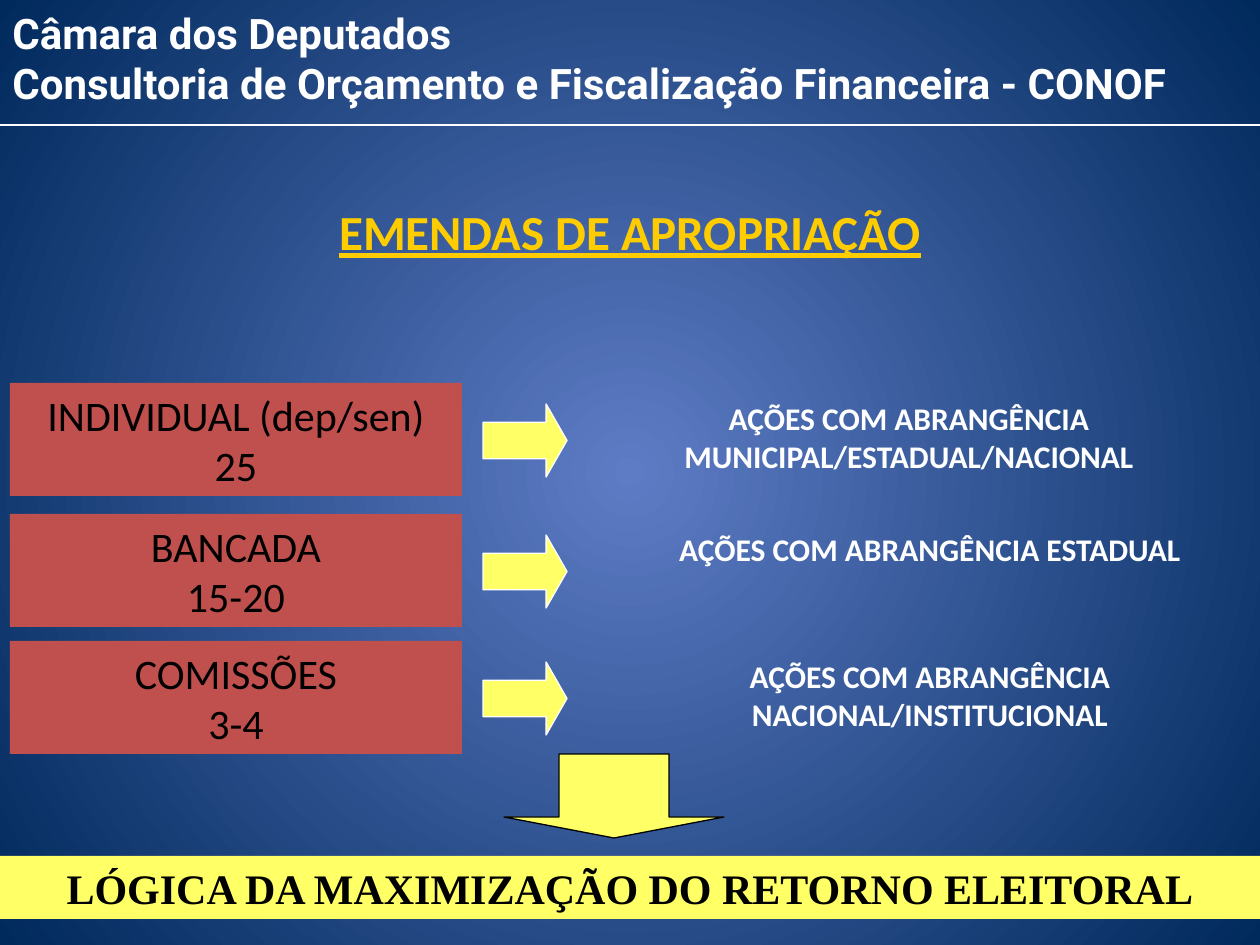
"""Build the slide on budget appropriation amendments."""
from lxml import etree
from pptx import Presentation, util as u
from pptx.dml.color import RGBColor
from pptx.enum import shapes, text
from pptx.oxml import parse_xml
from pptx.oxml.ns import nsdecls, qn

COLORS = {"center": "5E7CC5", "edge": "00295C", "gold": "FFCC00", "red": "C0504D",
          "yellow": "FFFF66", "white": "FFFFFF", "black": "000000"}
HEADER = ["Câmara dos Deputados",
          "Consultoria de Orçamento e Fiscalização Financeira - CONOF"]
TITLE = "EMENDAS DE APROPRIAÇÃO"
ROWS = [
    (383, 599, ["INDIVIDUAL (dep/sen)", "25"],
     "AÇÕES COM ABRANGÊNCIA MUNICIPAL/ESTADUAL/NACIONAL"),
    (514, 620, ["BANCADA", "15-20"], "AÇÕES COM ABRANGÊNCIA ESTADUAL"),
    (641, 620, ["COMISSÕES", "3-4"], "AÇÕES COM ABRANGÊNCIA NACIONAL/INSTITUCIONAL"),
]
CONCLUSION = "LÓGICA DA MAXIMIZAÇÃO DO RETORNO ELEITORAL"
WIDTH, HEIGHT = 1260, 945
SCALE = 914400 / 126


def px(*values):
    return [u.Emu(round(v * SCALE)) for v in values]


def rgb(name):
    return RGBColor.from_string(COLORS[name])


def write(sp, lines, size, color, font="Calibri", bold=False, underline=None,
          align=text.PP_ALIGN.CENTER, anchor=text.MSO_ANCHOR.TOP):
    tf = sp.text_frame
    tf.word_wrap = True
    tf.vertical_anchor = anchor
    for i, line in enumerate(lines):
        p = tf.paragraphs[0] if i == 0 else tf.add_paragraph()
        p.alignment = align
        r = p.add_run()
        r.text = line
        r.font.name, r.font.size = font, u.Pt(size)
        r.font.bold, r.font.underline = bold, underline
        r.font.color.rgb = rgb(color)


def add_block(parent, kind, box, fill, line=None, adjustments=()):
    sp = parent.add_shape(kind, *px(*box))
    sp.shadow.inherit = False
    sp.fill.solid()
    sp.fill.fore_color.rgb = rgb(fill)
    if line:
        sp.line.color.rgb = rgb(line)
        sp.line.width = u.Pt(0.75)
    else:
        sp.line.fill.background()
    for i, value in enumerate(adjustments):
        sp.adjustments[i] = value
    return sp


def set_background(s):
    s.background.fill.gradient()
    grad = s.background._cSld.find(".//" + qn("a:gradFill"))
    grad.getparent().replace(grad, parse_xml(
        f'<a:gradFill {nsdecls("a")} rotWithShape="1"><a:gsLst>'
        f'<a:gs pos="0"><a:srgbClr val="{COLORS["center"]}"/></a:gs>'
        f'<a:gs pos="100000"><a:srgbClr val="{COLORS["edge"]}"/></a:gs></a:gsLst>'
        '<a:path path="circle"><a:fillToRect l="50000" t="50000" r="50000" b="50000"/>'
        '</a:path></a:gradFill>'))


def add_row(s, top, text_left, source, scope):
    group = s.shapes.add_group_shape().shapes
    box = add_block(group, shapes.MSO_SHAPE.RECTANGLE, (10, top, 452, 113), "red")
    write(box, source, 24, "black")
    label = group.add_textbox(*px(text_left, top + 10, 620, 88))
    write(label, [scope], 18, "white", bold=True)
    add_block(group, shapes.MSO_SHAPE.RIGHT_ARROW, (483, top + 21, 84, 73),
              "yellow", "white", (0.5, 0.286))


def main():
    prs = Presentation()
    prs.slide_width, prs.slide_height = px(WIDTH, HEIGHT)
    s = prs.slides.add_slide(prs.slide_layouts[6])
    set_background(s)

    title = s.shapes.add_textbox(*px(0, 195, WIDTH, 72))
    write(title, [TITLE], 28, "gold", bold=True, underline=True,
          anchor=text.MSO_ANCHOR.MIDDLE)
    for row in ROWS:
        add_row(s, *row)

    bar = add_block(s.shapes, shapes.MSO_SHAPE.RECTANGLE, (0, 856, WIDTH, 63), "yellow")
    write(bar, [CONCLUSION], 24, "black", "Times New Roman", True,
          anchor=text.MSO_ANCHOR.MIDDLE)
    add_block(s.shapes, shapes.MSO_SHAPE.DOWN_ARROW, (504, 754, 220, 84),
              "yellow", "black", (0.5, 0.25))

    header = s.shapes.add_textbox(*px(0, 1, WIDTH, 115))
    write(header, HEADER, 24, "white", "Roboto", True, align=text.PP_ALIGN.LEFT)
    rule = s.shapes.add_connector(shapes.MSO_CONNECTOR.STRAIGHT, *px(WIDTH, 125, 0, 125))
    rule.line.color.rgb = rgb("white")
    rule.line.width = u.Pt(1.5)
    etree.SubElement(rule._element.spPr, qn("a:effectLst"))

    prs.save("out.pptx")


if __name__ == "__main__":
    main()
